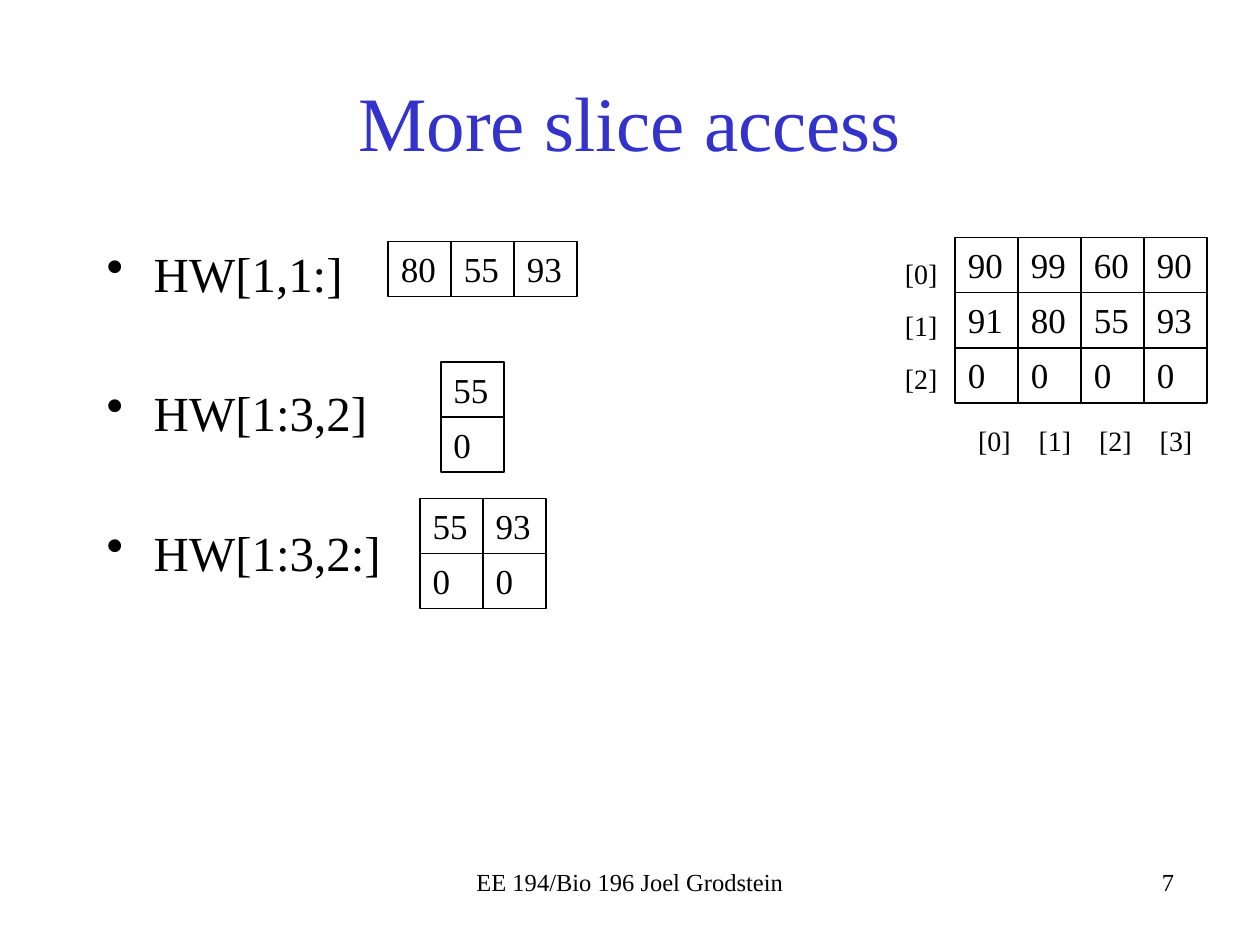
from lxml import etree
from pptx import Presentation
from pptx.dml.color import RGBColor
from pptx.enum.shapes import MSO_SHAPE
from pptx.enum.text import MSO_ANCHOR, PP_ALIGN
from pptx.oxml.ns import qn
from pptx.util import Cm, Pt

RECT = MSO_SHAPE.RECTANGLE
TOP, MIDDLE = MSO_ANCHOR.TOP, MSO_ANCHOR.MIDDLE
LEFT, CENTER, RIGHT = PP_ALIGN.LEFT, PP_ALIGN.CENTER, PP_ALIGN.RIGHT
FONT = "Times New Roman"
COLORS = {"title": "3333CC", "ink": "000000"}
CELL_W, CELL_H = 1.27, 1.11


def write(shape, lines, size, align=LEFT, anchor=TOP, color="ink", **format):
    """Fill a shape with paragraphs that share one format."""
    frame = shape.text_frame
    frame.text = "\n".join(lines)
    frame.word_wrap = True
    frame.vertical_anchor = anchor
    for para in frame.paragraphs:
        para.alignment = align
        for name, value in format.items():
            setattr(para, name, value)
        for run in para.runs:
            run.font.name = FONT
            run.font.size = Pt(size)
            run.font.color.rgb = RGBColor.from_string(COLORS[color])
    return frame


def label(box, lines, size, **format):
    """Add a text box at left, top, width, height in centimetres."""
    shape = slide.shapes.add_textbox(*map(Cm, box))
    return write(shape, lines, size, **format)


deck = Presentation()
deck.slide_width, deck.slide_height = Cm(25.4), Cm(19.05)
slide = deck.slides.add_slide(deck.slide_layouts[5])

# Title
title = slide.shapes.title
title.left, title.top, title.width, title.height = map(Cm, (1.9, 0.85, 21.6, 3.18))
write(title, ["More slice access"], 44, CENTER, MIDDLE, "title")

# Bulleted slice expressions
body = label((1.9, 4.66, 11.64, 12.28), ["HW[1,1:]", "HW[1:3,2]", "HW[1:3,2:]"],
             28, space_after=Pt(46))
body.margin_top = Cm(0.25)
for para in body.paragraphs:
    props = para._p.get_or_add_pPr()
    props.set("marL", str(Cm(0.95)))
    props.set("indent", str(-Cm(0.95)))
    etree.SubElement(props, qn("a:buChar")).set("char", "•")

# Arrays: left, top, rows of values
arrays = [
    (19.26, 4.79, [[90, 99, 60, 90], [91, 80, 55, 93], [0, 0, 0, 0]]),
    (7.83, 4.87, [[80, 55, 93]]),
    (8.89, 7.3, [[55], [0]]),
    (8.47, 10.05, [[55, 93], [0, 0]]),
]
for left, top, rows in arrays:
    for r, row in enumerate(rows):
        for c, value in enumerate(row):
            cell = slide.shapes.add_shape(
                RECT, Cm(left + c * CELL_W), Cm(top + r * CELL_H),
                Cm(CELL_W), Cm(CELL_H))
            cell.shadow.inherit = False
            cell.fill.background()
            cell.line.color.rgb = RGBColor.from_string(COLORS["ink"])
            cell.line.width = Pt(1)
            write(cell, [str(value)], 20)

# Row and column indices of the full array
label((17.99, 4.66, 1.48, 3.45), ["[0]", "[1]", "[2]"], 16, line_spacing=Pt(30))
index = label((19.47, 8.41, 5.08, 0.94), ["[0]\t[1]\t[2]\t[3]"], 16)
tabs = etree.SubElement(index.paragraphs[0]._p.get_or_add_pPr(), qn("a:tabLst"))
for step in range(1, 4):
    stop = etree.SubElement(tabs, qn("a:tab"))
    stop.set("pos", str(Cm(1.22 * step)))
    stop.set("algn", "l")

# Footer and slide number
label((8.68, 17.35, 8.04, 1.27), ["EE 194/Bio 196 Joel Grodstein"], 14, align=CENTER)
label((15.88, 17.35, 8.04, 1.27), ["7"], 14, align=RIGHT)

deck.save("out.pptx")
